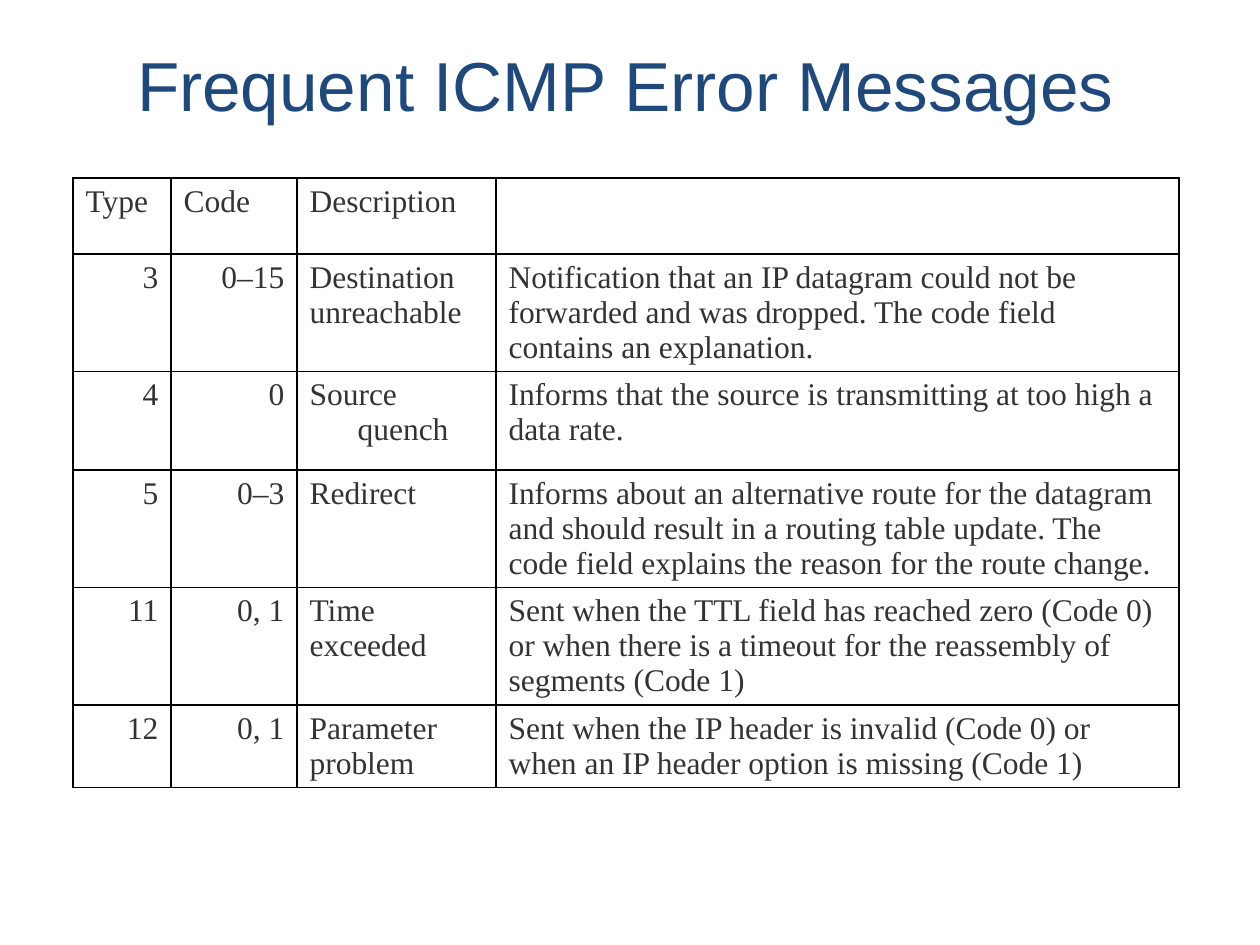
from lxml import etree
from pptx import Presentation
from pptx.dml.color import RGBColor
from pptx.enum.text import MSO_ANCHOR, MSO_AUTO_SIZE, PP_ALIGN
from pptx.oxml.ns import qn
from pptx.util import Pt

PX = 914400 / 126
BLUE = RGBColor(0x1F, 0x49, 0x7D)
GRAY = RGBColor(0x33, 0x33, 0x33)
BLACK = RGBColor(0x00, 0x00, 0x00)
LEFT, CENTER, RIGHT = PP_ALIGN.LEFT, PP_ALIGN.CENTER, PP_ALIGN.RIGHT
MIDDLE = MSO_ANCHOR.MIDDLE
NO_AUTOFIT = MSO_AUTO_SIZE.NONE

TITLE_BOX = (32, 42, 1187, 84)
TABLE_BOX = (73, 178, 1106, 609)
COLUMN_WIDTHS = (98, 126, 199, 683)
ROW_HEIGHTS = (76, 117, 99, 117, 117, 83)
COLUMN_ALIGNMENTS = (RIGHT, RIGHT, LEFT, LEFT)
HANGING_INDENT = 48
HANGING_TEXT = "Source quench"
MESSAGES = (
    ("Type", "Code", "Description", ""),
    ("3", "0–15", "Destination unreachable",
     "Notification that an IP datagram could not be forwarded and was dropped. "
     "The code field contains an explanation."),
    ("4", "0", HANGING_TEXT,
     "Informs that the source is transmitting at too high a data rate."),
    ("5", "0–3", "Redirect",
     "Informs about an alternative route for the datagram and should result in a "
     "routing table update. The code field explains the reason for the route change."),
    ("11", "0, 1", "Time exceeded",
     "Sent when the TTL field has reached zero (Code 0) or when there is a timeout "
     "for the reassembly of segments (Code 1)"),
    ("12", "0, 1", "Parameter\vproblem",
     "Sent when the IP header is invalid (Code 0) or when an IP header option is "
     "missing (Code 1)"),
)


def px(length):
    """Turn pixels into EMU."""
    return round(length * PX)


def format_paragraph(paragraph, alignment, font_name, size, color):
    """Set the alignment and font of a paragraph and its runs."""
    paragraph.alignment = alignment
    for font in [paragraph.font] + [run.font for run in paragraph.runs]:
        font.name = font_name
        font.size = Pt(size)
        font.color.rgb = color


def add_title(slide, box, text):
    """Place and format the title placeholder in the box."""
    title = slide.shapes.title
    title.left, title.top, title.width, title.height = map(px, box)
    frame = title.text_frame
    frame.text = text
    frame.auto_size = NO_AUTOFIT
    frame.word_wrap = True
    frame.vertical_anchor = MIDDLE
    format_paragraph(frame.paragraphs[0], CENTER, "Arial", 39.6, BLUE)


def add_borders(cell):
    """Draw a thin black line on every side of the cell."""
    properties = cell._tc.get_or_add_tcPr()
    for side in ("a:lnL", "a:lnR", "a:lnT", "a:lnB"):
        line = etree.SubElement(properties, qn(side), w=str(Pt(1)))
        fill = etree.SubElement(line, qn("a:solidFill"))
        etree.SubElement(fill, qn("a:srgbClr"), val=str(BLACK))


def fill_cell(cell, text, alignment):
    """Write the text into a bordered cell without a fill."""
    add_borders(cell)
    cell.fill.background()
    cell.text = text
    paragraph = cell.text_frame.paragraphs[0]
    format_paragraph(paragraph, alignment, "Times New Roman", 18, GRAY)
    if text == HANGING_TEXT:
        properties = paragraph._p.get_or_add_pPr()
        properties.set("marL", str(px(HANGING_INDENT)))
        properties.set("indent", str(-px(HANGING_INDENT)))


def add_message_table(slide, box, messages):
    """Build the table of error messages in the box."""
    frame = slide.shapes.add_table(len(messages), len(COLUMN_WIDTHS), *map(px, box))
    table = frame.table
    table.first_row = False
    table.horz_banding = False
    for column, width in zip(table.columns, COLUMN_WIDTHS):
        column.width = px(width)
    for row, height in zip(table.rows, ROW_HEIGHTS):
        row.height = px(height)
    for row_index, texts in enumerate(messages):
        for column_index, text in enumerate(texts):
            alignment = COLUMN_ALIGNMENTS[column_index] if row_index else LEFT
            fill_cell(table.cell(row_index, column_index), text, alignment)


def main():
    """Build the slide and save it."""
    presentation = Presentation()
    presentation.slide_width = px(1260)
    presentation.slide_height = px(945)
    slide = presentation.slides.add_slide(presentation.slide_layouts[5])
    add_title(slide, TITLE_BOX, "Frequent ICMP Error Messages")
    add_message_table(slide, TABLE_BOX, MESSAGES)
    presentation.save("out.pptx")


if __name__ == "__main__":
    main()
